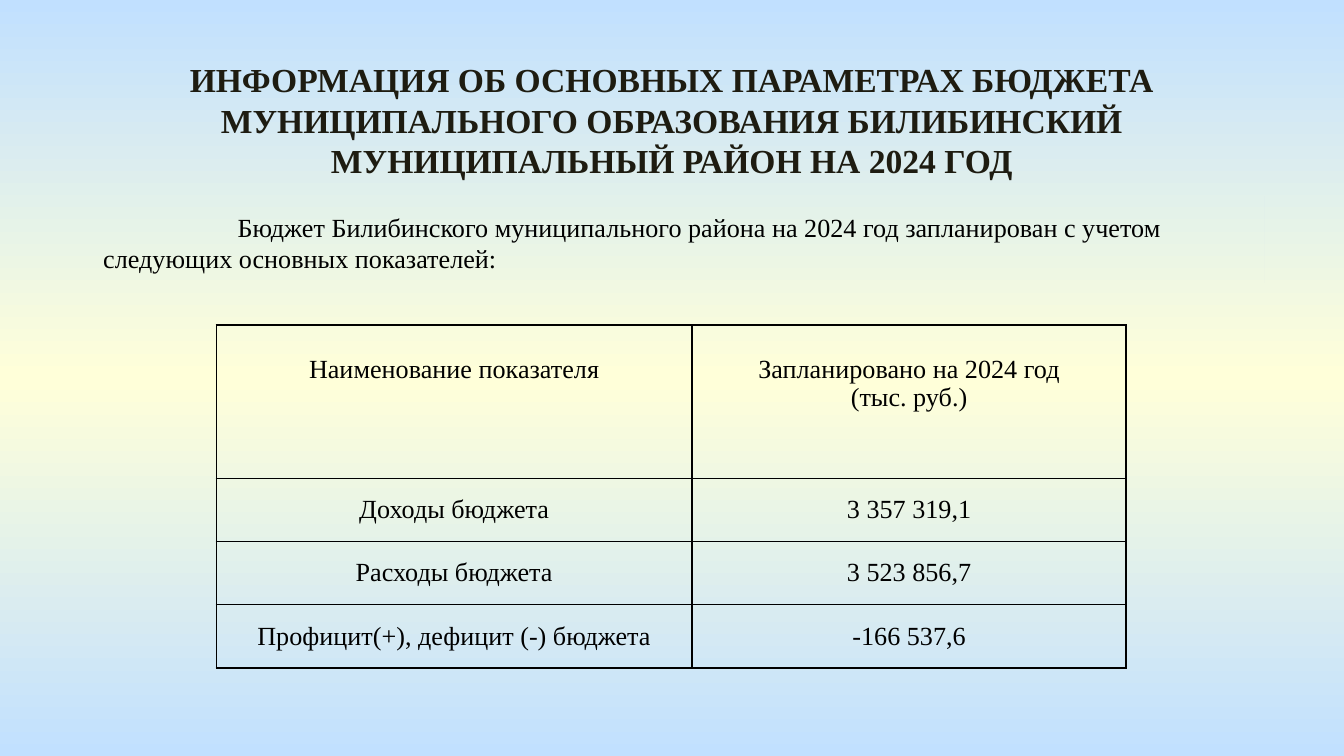
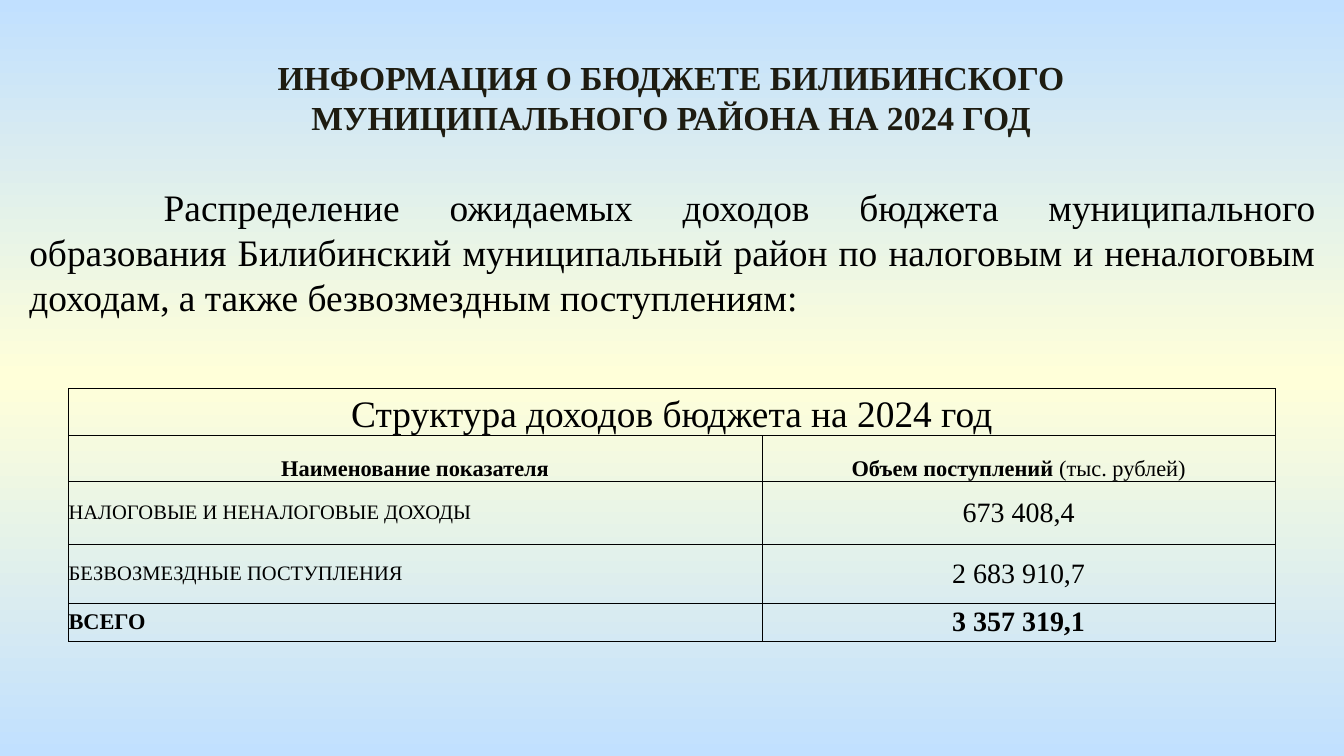
"""Builds two slides on the main figures of a district budget for 2024."""
import copy

import lxml.etree
import pptx
import pptx.dml.color
import pptx.enum.shapes
import pptx.enum.text
import pptx.oxml.ns
import pptx.util

Inches = pptx.util.Inches
Pt = pptx.util.Pt
RGBColor = pptx.dml.color.RGBColor
Align = pptx.enum.text.PP_ALIGN
Anchor = pptx.enum.text.MSO_ANCHOR
qn = pptx.oxml.ns.qn

BLACK = RGBColor(0x00, 0x00, 0x00)
DARK = RGBColor(0x1E, 0x1C, 0x11)
BLUE = RGBColor(0xC1, 0xE0, 0xFF)
CREAM = RGBColor(0xFF, 0xFF, 0xD9)
FONT = "Times New Roman"


class Deck:
    """Holds the shared style and the current slide."""

    def __init__(self):
        self.prs = pptx.Presentation()
        self.prs.slide_width = Inches(10)
        self.prs.slide_height = Inches(10) * 9 // 16
        self.slide = None
        self.paint()

    def paint(self):
        """Give the master its gradient background."""
        master = self.prs.slide_master
        fill = master.background.fill
        fill.gradient()
        fill.gradient_angle = 90
        stops = master.element.find(".//" + qn("a:gsLst"))
        while len(stops) > 2:
            stops.remove(stops[-1])
        stops.insert(1, copy.deepcopy(stops[0]))
        for stop, color, place in zip(fill.gradient_stops, (BLUE, CREAM, BLUE), (0, 0.5, 1)):
            stop.color.rgb = color
            stop.position = place

    def style(self, frame, size, align, bold=False, color=BLACK):
        """Format every paragraph and run of a text frame."""
        for para in frame.paragraphs:
            para.alignment = align
            for run in para.runs:
                font = run.font
                font.name, font.size, font.bold = FONT, Pt(size), bold
                font.color.rgb = color

    def title(self, text, left, top, width, height):
        """Start a slide with its title."""
        self.slide = self.prs.slides.add_slide(self.prs.slide_layouts[5])
        head = self.slide.shapes.title
        head.left, head.top = Inches(left), Inches(top)
        head.width, head.height = Inches(width), Inches(height)
        frame = head.text_frame
        frame.text = text
        frame.word_wrap = True
        frame.auto_size = pptx.enum.text.MSO_AUTO_SIZE.NONE
        frame.vertical_anchor = Anchor.TOP
        self.style(frame, 18, Align.CENTER, True, DARK)

    def intro(self, text, left, top, width, height, size, align):
        """Add the lead paragraph with an indented first line."""
        box = self.slide.shapes.add_shape(
            pptx.enum.shapes.MSO_SHAPE.RECTANGLE,
            Inches(left), Inches(top), Inches(width), Inches(height))
        box.shadow.inherit = False
        box.fill.background()
        box.element.set("useBgFill", "1")
        box.line.fill.background()
        frame = box.text_frame
        frame.text = text
        frame.word_wrap = True
        frame.vertical_anchor = Anchor.BOTTOM
        frame.margin_bottom = Inches(0.06)
        self.style(frame, size, align)
        props = frame.paragraphs[0]._p.get_or_add_pPr()
        props.set("marL", "0")
        props.set("indent", str(Inches(1)))

    def table(self, left, top, cols, rows, weight):
        """Add a plain table with black borders."""
        frame = self.slide.shapes.add_table(
            len(rows), len(cols), Inches(left), Inches(top),
            Inches(sum(cols)), Inches(sum(rows)))
        table = frame.table
        table.first_row = table.horz_banding = False
        for col, width in zip(table.columns, cols):
            col.width = Inches(width)
        for row, height in zip(table.rows, rows):
            row.height = Inches(height)
        for cell in table.iter_cells():
            cell.fill.background()
            self.frame(cell, weight)
        return table

    def frame(self, cell, weight):
        """Draw the four borders of a cell."""
        props = cell._tc.get_or_add_tcPr()
        for spot, side in enumerate("LRTB"):
            line = lxml.etree.Element(qn("a:ln" + side), w=str(Pt(weight)))
            fill = lxml.etree.SubElement(line, qn("a:solidFill"))
            lxml.etree.SubElement(fill, qn("a:srgbClr"), val=str(BLACK))
            props.insert(spot, line)

    def cell(self, cell, text, size, align=Align.CENTER, anchor=Anchor.MIDDLE,
             bold=False, side=0, top=0):
        """Fill one cell with text."""
        cell.margin_left = cell.margin_right = Inches(side)
        cell.margin_top, cell.margin_bottom = Inches(top), 0
        cell.vertical_anchor = anchor
        cell.text_frame.text = text
        self.style(cell.text_frame, size, align, bold)


def main_terms(deck):
    """Build the slide of main budget figures."""
    deck.title("ИНФОРМАЦИЯ ОБ ОСНОВНЫХ ПАРАМЕТРАХ БЮДЖЕТА МУНИЦИПАЛЬНОГО "
               "ОБРАЗОВАНИЯ БИЛИБИНСКИЙ МУНИЦИПАЛЬНЫЙ РАЙОН НА 2024 ГОД",
               0.35, 0.39, 9.3, 1.01)
    deck.intro("Бюджет Билибинского муниципального района на 2024 год запланирован "
               "с учетом следующих основных показателей:",
               0.67, 1.46, 8.74, 0.64, 14, Align.LEFT)
    table = deck.table(1.61, 2.42, (3.54, 3.23), (1.14, 0.47, 0.47, 0.47), 1)
    heads = ("Наименование показателя", "Запланировано на 2024 год\n(тыс. руб.)")
    for col, text in enumerate(heads):
        deck.cell(table.cell(0, col), text, 14, anchor=Anchor.TOP, side=0.07, top=0.22)
    lines = (
        ("Доходы бюджета", "3 357 319,1"),
        ("Расходы бюджета", "3 523 856,7"),
        ("Профицит(+), дефицит (-) бюджета", "-166 537,6"),
    )
    for row, (name, value) in enumerate(lines, 1):
        deck.cell(table.cell(row, 0), name, 14, side=0.07)
        deck.cell(table.cell(row, 1), value, 14)


def income(deck):
    """Build the slide of income structure."""
    deck.title("ИНФОРМАЦИЯ О БЮДЖЕТЕ БИЛИБИНСКОГО МУНИЦИПАЛЬНОГО РАЙОНА НА 2024 ГОД",
               1.13, 0.37, 7.73, 0.71)
    deck.intro("Распределение ожидаемых доходов бюджета муниципального образования "
               "Билибинский муниципальный район по налоговым и неналоговым доходам, "
               "а также безвозмездным поступлениям:",
               0.12, 1.32, 9.77, 1.11, 20, Align.JUSTIFY)
    table = deck.table(0.51, 2.89, (5.16, 3.82), (0.35, 0.34, 0.47, 0.44, 0.28), 0.5)
    table.cell(0, 0).merge(table.cell(0, 1))
    deck.cell(table.cell(0, 0), "Структура доходов бюджета на 2024 год", 20,
              anchor=Anchor.BOTTOM)
    for col, text in enumerate(("Наименование показателя", "Объем поступлений ")):
        deck.cell(table.cell(1, col), text, 12, anchor=Anchor.BOTTOM, bold=True)
    amount = table.cell(1, 1).text_frame
    unit = amount.paragraphs[0].add_run()
    unit.text = "(тыс. рублей)"
    deck.style(amount, 12, Align.CENTER, True)
    unit.font.bold = False
    lines = (
        ("НАЛОГОВЫЕ И НЕНАЛОГОВЫЕ ДОХОДЫ", "673 408,4", 11, False),
        ("БЕЗВОЗМЕЗДНЫЕ ПОСТУПЛЕНИЯ", "2 683 910,7", 11, False),
        ("ВСЕГО", "3 357 319,1", 12, True),
    )
    for row, (name, value, size, bold) in enumerate(lines, 2):
        deck.cell(table.cell(row, 0), name, size, Align.LEFT, bold=bold)
        deck.cell(table.cell(row, 1), value, 15, bold=bold)


def main():
    """Build and save the deck."""
    deck = Deck()
    main_terms(deck)
    income(deck)
    deck.prs.save("out.pptx")


if __name__ == "__main__":
    main()
